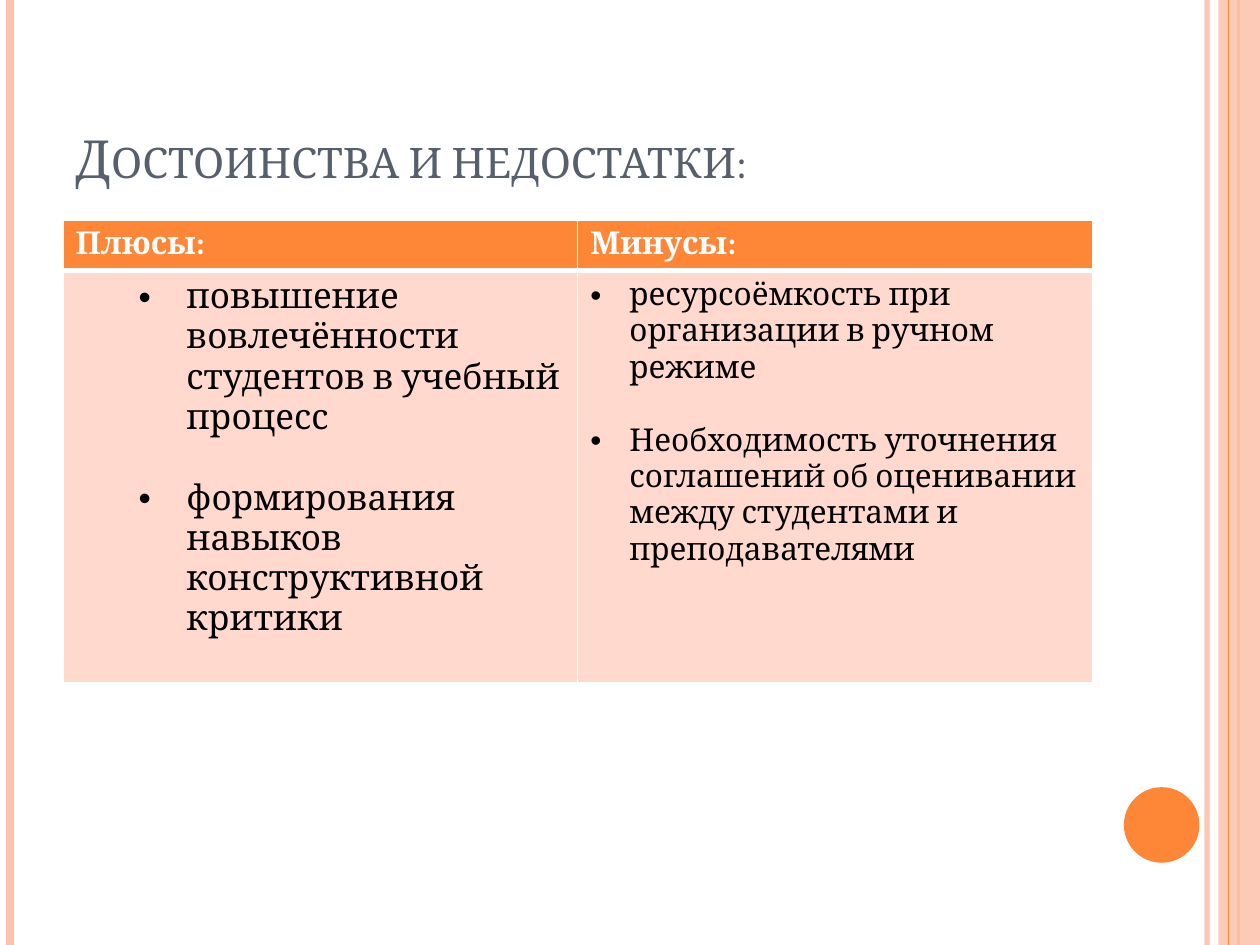
from lxml.etree import Element, SubElement
from pptx import Presentation
from pptx.dml.color import RGBColor
from pptx.enum.shapes import MSO_CONNECTOR, MSO_SHAPE
from pptx.enum.text import MSO_ANCHOR
from pptx.oxml.ns import qn
from pptx.util import Emu, Inches, Pt

WIDE, HIGH = Inches(10), Inches(7.5)


class Theme:
    font = "Cambria"
    accent, pale, cell = "FE8637", "FEC3AE", "FFD9CE"
    slate, white, black = "575F6D", "FFFFFF", "000000"
    title, big, body = Pt(30), Pt(20), Pt(18)


# Column heading, text size, left margin, hanging indent, gap, points
COLS = [
    ("Плюсы:", Theme.big, 0.88, 0.38, 23,
     ["повышение вовлечённости студентов в учебный процесс",
      "формирования навыков конструктивной критики"]),
    ("Минусы:", Theme.body, 0.31, 0.31, 21,
     ["ресурсоёмкость при организации в ручном режиме",
      "Необходимость уточнения соглашений об оценивании между "
      "студентами и преподавателями"]),
]


def put(obj, form):
    for name, val in form.items():
        setattr(obj, name, val)


def rgb(code):
    return RGBColor.from_string(code)


def share(x, y):
    """Shares of the slide's width and height, as lengths."""
    return Emu(round(WIDE * x)), Emu(round(HIGH * y))


def fade(shape, part):
    """Set the opacity of the shape's colour, in percent."""
    tint = next(shape._element.spPr.iter(qn("a:srgbClr")))
    SubElement(tint, qn("a:alpha"), val=str(part * 1000))


def stripe(slide, x, color, width, part=100):
    line = slide.shapes.add_connector(
        MSO_CONNECTOR.STRAIGHT, *share(x, 0), *share(x, 1))
    line.line.color.rgb = rgb(color)
    line.line.width = Pt(width)
    if part < 100:
        fade(line, part)
    SubElement(line._element.spPr, qn("a:effectLst"))


def block(slide, kind, spot, size, color):
    shape = slide.shapes.add_shape(kind, *share(*spot), *share(*size))
    shape.shadow.inherit = False
    shape.fill.solid()
    shape.fill.fore_color.rgb = rgb(color)
    shape.line.fill.background()
    return shape


def write(para, text, size, color, bold=False):
    run = para.add_run()
    run.text = text
    put(run.font, {"name": Theme.font, "size": size, "bold": bold})
    run.font.color.rgb = rgb(color)
    return run


def bullet(para, left, hang):
    props = para._p.get_or_add_pPr()
    props.set("marL", str(Inches(left)))
    props.set("indent", str(-Inches(hang)))
    SubElement(props, qn("a:buFont"), typeface="Arial")
    SubElement(props, qn("a:buChar"), char="•")


def paint(cell, color, edges):
    """Fill a cell and give it white edges: left, right, top, bottom."""
    cell.fill.solid()
    cell.fill.fore_color.rgb = rgb(color)
    props = cell._tc.get_or_add_tcPr()
    for spot, (side, width) in enumerate(zip("LRTB", edges)):
        edge = Element(qn("a:ln" + side), w=str(Pt(width)))
        fill = SubElement(edge, qn("a:solidFill"))
        SubElement(fill, qn("a:srgbClr"), val=Theme.white)
        props.insert(spot, edge)


def heading(slide, text):
    box = slide.shapes.add_textbox(*share(0.05, 0.04), *share(0.817, 0.167))
    frame = box.text_frame
    put(frame, {"word_wrap": True, "vertical_anchor": MSO_ANCHOR.BOTTOM})
    run = write(frame.paragraphs[0], text, Theme.title, Theme.slate)
    run.font._element.set("cap", "small")


def grid(slide):
    frame = slide.shapes.add_table(
        2, len(COLS), *share(0.05, 0.233), *share(0.817, 0.49))
    table = frame.table
    table.horz_banding = False
    for row, high in zip(table.rows, (0.4, 3.27)):
        row.height = Inches(high)
    for col, (name, size, left, hang, gap, points) in enumerate(COLS):
        head, body = table.cell(0, col), table.cell(1, col)
        paint(head, Theme.accent, (1, 1, 1, 3))
        paint(body, Theme.cell, (1, 1, 3, 1))
        write(head.text_frame.paragraphs[0], name, Theme.body,
              Theme.white, True)
        text = body.text_frame
        for num, point in enumerate(points):
            para = text.add_paragraph() if num else text.paragraphs[0]
            if num:
                para.space_before = Pt(gap)
            bullet(para, left, hang)
            write(para, point, size, Theme.black)


def main():
    deck = Presentation()
    put(deck, {"slide_width": WIDE, "slide_height": HIGH})
    slide = deck.slides.add_slide(deck.slide_layouts[6])

    # Side stripes and the corner disc
    stripe(slide, 0.958, Theme.pale, 3, 93)
    stripe(slide, 0.008, Theme.pale, 4.5)
    stripe(slide, 0.983, Theme.accent, 1.5)
    band = block(slide, MSO_SHAPE.RECTANGLE, (0.967, 0), (0.033, 1),
                 Theme.pale)
    fade(band, 87)
    stripe(slide, 0.975, Theme.accent, 0.75)
    block(slide, MSO_SHAPE.OVAL, (0.892, 0.833), (0.06, 0.08), Theme.accent)

    # Title and comparison
    heading(slide, "Достоинства и недостатки:")
    grid(slide)
    deck.save("out.pptx")


if __name__ == "__main__":
    main()
